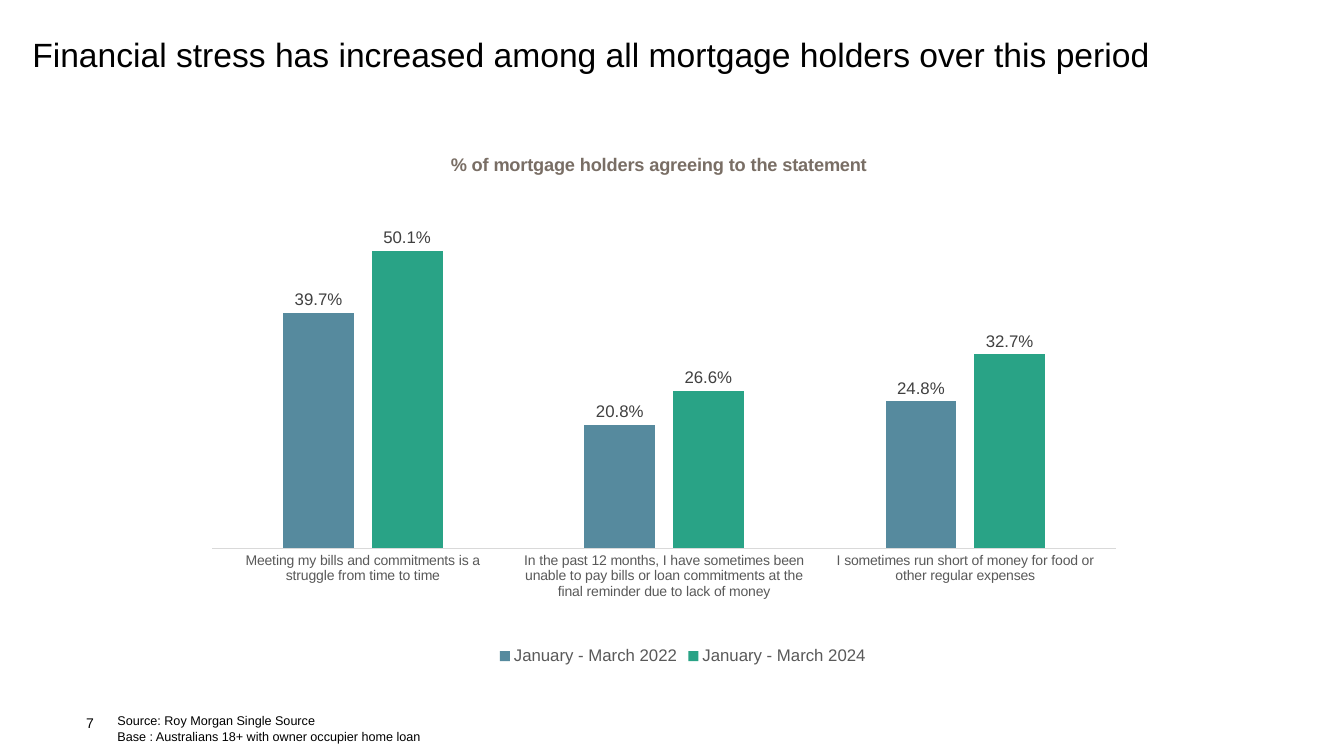
from dataclasses import dataclass

from lxml.etree import SubElement
from pptx import Presentation
from pptx.chart.data import CategoryChartData
from pptx.dml.color import RGBColor
from pptx.enum.chart import XL_CHART_TYPE, XL_LABEL_POSITION, XL_LEGEND_POSITION, XL_TICK_MARK
from pptx.enum.text import MSO_ANCHOR
from pptx.oxml.ns import qn
from pptx.util import Inches, Pt

SLIDE_WIDTH, SLIDE_HEIGHT = Inches(13.33), Inches(7.5)
COLUMNS, ROWS = 12, 10


@dataclass(frozen=True)
class Theme:
    font: str = "Arial"
    ink: str = "000000"
    heading: str = "796E65"
    axis_text: str = "595959"
    label_text: str = "404040"
    axis_line: str = "D9D9D9"
    series: tuple = ("568A9E", "29A386")
    title_size: int = 24
    heading_size: int = 13
    label_size: int = 12
    small_size: int = 10
    source_size: int = 9


THEME = Theme()

STATEMENTS = (
    "Meeting my bills and commitments is a struggle from time to time",
    "In the past 12 months, I have sometimes been unable to pay bills or loan "
    "commitments at the final reminder due to lack of money",
    "I sometimes run short of money for food or other regular expenses",
)
AGREEMENT = {
    "January - March 2022": (0.397, 0.208, 0.248),
    "January - March 2024": (0.501, 0.266, 0.327),
}


def grid(left, top, width, height):
    column, row = SLIDE_WIDTH / COLUMNS, SLIDE_HEIGHT / ROWS
    return [int(length) for length in (left * column, top * row, width * column, height * row)]


def apply(target, values):
    for name, value in values.items():
        setattr(target, name, value)


def style_font(font, size, color, bold=False):
    apply(font, {"name": THEME.font, "size": Pt(size), "bold": bold})
    font.color.rgb = RGBColor.from_string(color)


def add_text(slide, place, lines, size, line_spacing=1.0, **frame_format):
    frame = slide.shapes.add_textbox(*grid(*place)).text_frame
    apply(frame, {"word_wrap": True, **frame_format})
    for index, line in enumerate(lines):
        paragraph = frame.add_paragraph() if index else frame.paragraphs[0]
        paragraph.text = line
        paragraph.line_spacing = line_spacing
        style_font(paragraph.font, size, THEME.ink)


def set_layout(parent, **values):
    layout = parent.find(qn("c:layout"))
    if layout is None:
        layout = SubElement(parent, qn("c:layout"))
    manual = SubElement(layout, qn("c:manualLayout"))
    for name, value in values.items():
        SubElement(manual, qn(f"c:{name}")).set("val", str(value))
    return layout


def style_heading(chart, text):
    chart.has_title = True
    title = chart.chart_title
    title.include_in_layout = False
    paragraph = title.text_frame.paragraphs[0]
    run = paragraph.add_run()
    run.text = text
    style_font(run.font, THEME.heading_size, THEME.heading, True)
    element = title._element
    layout = set_layout(element, xMode="edge", yMode="edge", x=0.25, y=0.01)
    element.find(qn("c:tx")).addnext(layout)


def style_axes(chart):
    axis = chart.category_axis
    apply(axis, {"major_tick_mark": XL_TICK_MARK.NONE, "minor_tick_mark": XL_TICK_MARK.NONE})
    style_font(axis.tick_labels.font, THEME.small_size, THEME.axis_text)
    axis.format.line.color.rgb = RGBColor.from_string(THEME.axis_line)
    axis.format.line.width = Pt(0.75)
    apply(chart.value_axis, {
        "visible": False,
        "has_major_gridlines": False,
        "minimum_scale": 0,
        "maximum_scale": 0.6,
        "major_unit": 50,
    })


def style_series(plot):
    apply(plot, {"gap_width": 200, "overlap": -25, "vary_by_categories": False})
    for series, color in zip(plot.series, THEME.series):
        series.format.fill.solid()
        series.format.fill.fore_color.rgb = RGBColor.from_string(color)
        labels = series.data_labels
        apply(labels, {
            "show_value": True,
            "number_format": "0.0%",
            "number_format_is_linked": False,
            "position": XL_LABEL_POSITION.OUTSIDE_END,
        })
        style_font(labels.font, THEME.label_size, THEME.label_text)


def add_agreement_chart(slide, place, heading):
    data = CategoryChartData(number_format="0.0%")
    data.categories = STATEMENTS
    for period, shares in AGREEMENT.items():
        data.add_series(period, shares)
    chart = slide.shapes.add_chart(XL_CHART_TYPE.COLUMN_CLUSTERED, *grid(*place), data).chart
    style_font(chart.font, THEME.small_size, THEME.ink)
    style_heading(chart, heading)
    style_axes(chart)
    style_series(chart.plots[0])
    chart.has_legend = True
    apply(chart.legend, {"position": XL_LEGEND_POSITION.BOTTOM, "include_in_layout": False})
    style_font(chart.legend.font, THEME.label_size, THEME.axis_text)
    plot_area = chart._chartSpace.chart.plotArea
    layout = set_layout(plot_area, layoutTarget="inner", xMode="edge", yMode="edge",
                        x=0, y=0.09, w=0.96, h=0.68)
    plot_area.insert(0, layout)


def main():
    presentation = Presentation()
    apply(presentation, {"slide_width": SLIDE_WIDTH, "slide_height": SLIDE_HEIGHT})
    slide = presentation.slides.add_slide(presentation.slide_layouts[6])
    add_text(slide, (0.77, 9.15, 2.7, 0.53), ["7"], THEME.small_size,
             word_wrap=False, vertical_anchor=MSO_ANCHOR.BOTTOM,
             margin_left=0, margin_top=0, margin_right=0, margin_bottom=0)
    add_text(slide, (0.2, 0.45, 10.74, 1.71),
             ["Financial stress has increased among all mortgage holders over this period"],
             THEME.title_size, line_spacing=0.9)
    add_text(slide, (0.96, 9.37, 7.3, 0.53),
             ["Source: Roy Morgan Single Source",
              "Base : Australians 18+ with owner occupier home loan"],
             THEME.source_size)
    add_agreement_chart(slide, (1.89, 1.92, 8.41, 6.93),
                        "% of mortgage holders agreeing to the statement")
    presentation.save("out.pptx")


if __name__ == "__main__":
    main()
